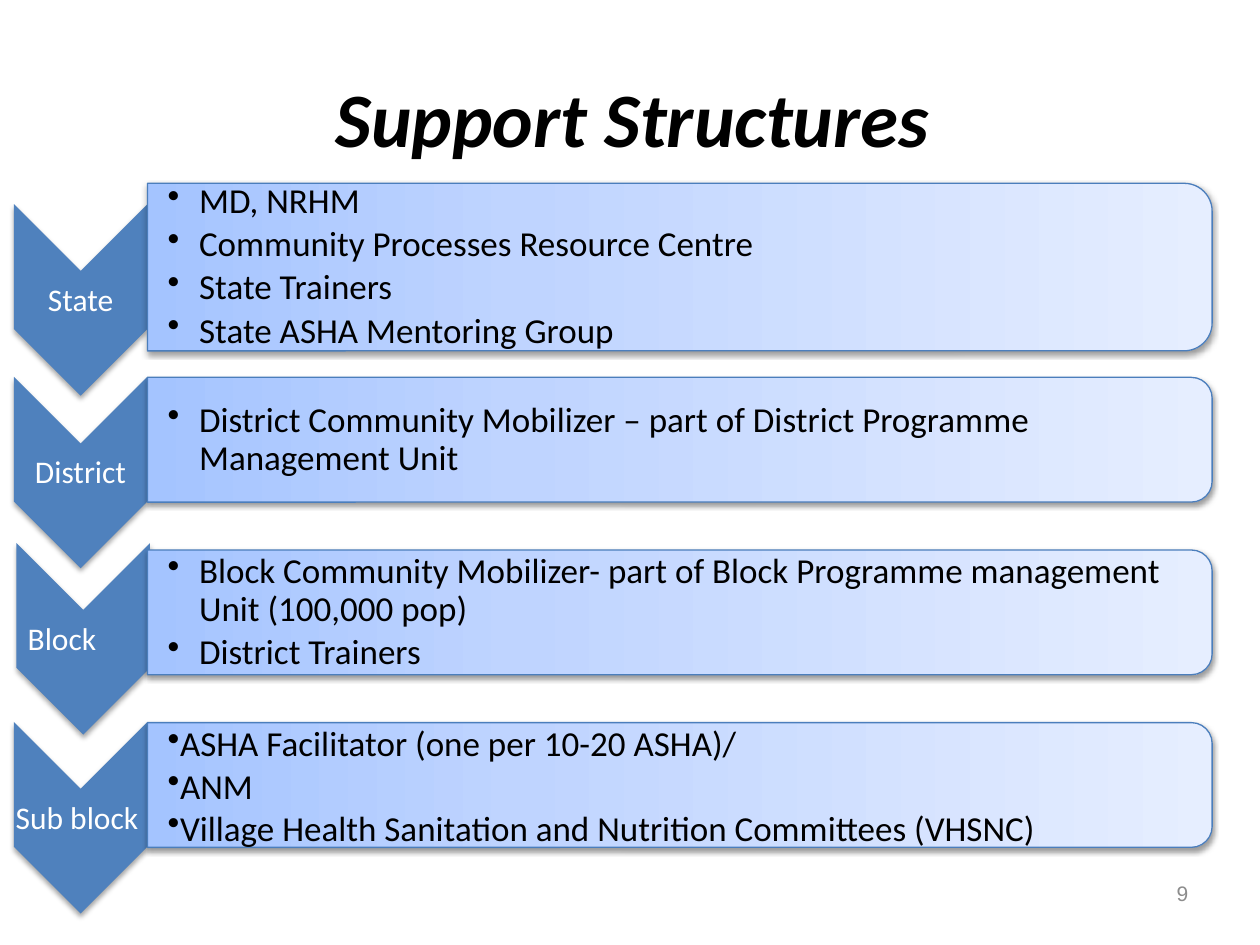
import pptx
import pptx.util
import pptx.dml.color
import pptx.enum.shapes
import pptx.enum.text
import pptx.oxml
import pptx.oxml.ns
from pptx.util import Inches

ALIGN = pptx.enum.text.PP_ALIGN
ANCHOR = pptx.enum.text.MSO_ANCHOR
SHAPE = pptx.enum.shapes.MSO_SHAPE

ROW_PITCH = 1.37
CHEVRON_LEFT, CHEVRON_TOP = 0.11, 1.62
CHEVRON_WIDTH, CHEVRON_HEIGHT = 1.06, 1.52
PANEL_LEFT, PANEL_WIDTH, PANEL_CENTER = 1.17, 8.45, 2.12
PANEL_STOPS = ((0, "A4C4FF"), (35, "BFD4FF"), (100, "E6EEFF"))

HANGING = {"indent": 0.25, "format": {"line_spacing": 0.9, "space_after": pptx.util.Pt(3)}}
TIGHT = {"indent": 0, "format": {"line_spacing": 1.0}}
CENTERED = {"shift": (0, 0), "align": ALIGN.CENTER, "inset": 0.01}
OFFSET = {"shift": (0.02, -0.05), "align": ALIGN.LEFT, "inset": 0.09}

LEVELS = [
    ("State", CENTERED, 1.33, HANGING, [
        "MD, NRHM",
        "Community Processes Resource Centre",
        "State Trainers",
        "State ASHA Mentoring Group",
    ]),
    ("District", CENTERED, 0.99, HANGING, [
        "District Community Mobilizer – part of District Programme Management Unit",
    ]),
    ("Block", OFFSET, 0.99, HANGING, [
        "Block Community Mobilizer- part of Block Programme management Unit (100,000 pop)",
        "District Trainers",
    ]),
    ("Sub block ", CENTERED, 0.99, TIGHT, [
        "ASHA Facilitator (one per 10-20 ASHA)/",
        "ANM",
        "Village Health Sanitation and Nutrition Committees (VHSNC)",
    ]),
]


def color(value):
    return pptx.dml.color.RGBColor.from_string(value)


def apply(target, values):
    for name, value in values.items():
        setattr(target, name, value)


def element(xml):
    namespace = pptx.oxml.ns.nsdecls("a")
    return pptx.oxml.parse_xml(xml.replace(">", f" {namespace}>", 1))


def write(para, text, size, font, fill, **style):
    span = para.add_run()
    span.text = text
    apply(span.font, {"size": pptx.util.Pt(size), "name": font, **style})
    span.font.color.rgb = color(fill)


def add_text_box(page, left, top, width, height, insets, anchor):
    box = page.shapes.add_textbox(*map(Inches, (left, top, width, height)))
    names = ("margin_left", "margin_top", "margin_right", "margin_bottom")
    frame_format = dict(zip(names, map(Inches, insets)))
    apply(box.text_frame, {**frame_format, "word_wrap": True, "vertical_anchor": anchor})
    return box.text_frame


def add_turned_shape(page, preset, left, top, width, height):
    turned_left = left + (width - height) / 2
    turned_top = top + (height - width) / 2
    shape = page.shapes.add_shape(
        preset, *map(Inches, (turned_left, turned_top, height, width)))
    shape.rotation = 90
    return shape


def add_shadow(shape, opacity, distance):
    shape.shadow.inherit = False
    effects = shape.element.spPr.find(pptx.oxml.ns.qn("a:effectLst"))
    blur, offset = pptx.util.Pt(3.1), pptx.util.Pt(distance)
    effects.append(element(
        f'<a:outerShdw blurRad="{blur}" dist="{offset}" dir="5400000" rotWithShape="0">'
        f'<a:srgbClr val="000000"><a:alpha val="{opacity * 1000}"/></a:srgbClr>'
        '</a:outerShdw>'))


def add_chevron(page, left, top):
    shape = add_turned_shape(
        page, SHAPE.CHEVRON, left, top, CHEVRON_WIDTH, CHEVRON_HEIGHT)
    shape.fill.solid()
    shape.fill.fore_color.rgb = color("4F81BD")
    shape.line.fill.background()
    add_shadow(shape, 35, 1.8)


def add_label(page, left, top, text, style):
    insets = (style["inset"], 0.01, 0.01, 0.01)
    frame = add_text_box(
        page, left, top + 0.54, CHEVRON_WIDTH, 0.46, insets, ANCHOR.MIDDLE)
    para = frame.paragraphs[0]
    apply(para, {"alignment": style["align"], "line_spacing": 0.9,
                 "space_after": pptx.util.Pt(6.3)})
    write(para, text, 18, "Calibri", "FFFFFF")


def add_panel(page, top, height):
    shape = add_turned_shape(
        page, SHAPE.ROUND_2_SAME_RECTANGLE, PANEL_LEFT, top, PANEL_WIDTH, height)
    stops = "".join(
        f'<a:gs pos="{place * 1000}"><a:srgbClr val="{value}"/></a:gs>'
        for place, value in PANEL_STOPS)
    shape.fill.background()
    blank = shape.element.spPr.find(pptx.oxml.ns.qn("a:noFill"))
    shape.element.spPr.replace(blank, element(
        f'<a:gradFill rotWithShape="1"><a:gsLst>{stops}</a:gsLst>'
        '<a:lin ang="16200000" scaled="0"/></a:gradFill>'))
    shape.line.color.rgb = color("4B7EBC")
    shape.line.width = pptx.util.Pt(0.75)
    add_shadow(shape, 38, 1.6)


def add_bullets(page, top, height, lines, style):
    frame = add_text_box(page, PANEL_LEFT, top + 0.05, PANEL_WIDTH - 0.04,
                         height - 0.1, (0.16, 0.01, 0.01, 0.01), ANCHOR.MIDDLE)
    indent = Inches(style["indent"])
    for index, text in enumerate(lines):
        para = frame.add_paragraph() if index else frame.paragraphs[0]
        apply(para, {"level": 1, "alignment": ALIGN.LEFT, **style["format"]})
        properties = para._p.get_or_add_pPr()
        properties.set("marL", str(indent))
        properties.set("indent", str(-indent))
        properties.append(element('<a:buChar char="•"></a:buChar>'))
        write(para, text, 20, "Calibri", "000000")


def add_title(page, text):
    title = page.shapes.title
    apply(title, dict(zip(("left", "top", "width", "height"),
                          map(Inches, (0.5, 0.3, 9, 1.25)))))
    apply(title.text_frame, {"vertical_anchor": ANCHOR.MIDDLE,
                             "margin_left": Inches(0.14)})
    para = title.text_frame.paragraphs[0]
    para.alignment = ALIGN.CENTER
    write(para, text, 44, "Calibri", "000000", bold=True, italic=True)


def add_page_number(page, text):
    frame = add_text_box(page, 7.17, 6.95, 2.33, 0.4,
                         (0.07, 0.04, 0.07, 0.04), ANCHOR.TOP)
    para = frame.paragraphs[0]
    para.alignment = ALIGN.RIGHT
    write(para, text, 12, "Arial", "8C8C8C")


def add_level(page, index, label, label_style, height, list_style, lines):
    shift_x, shift_y = label_style["shift"]
    left = CHEVRON_LEFT + shift_x
    top = CHEVRON_TOP + index * ROW_PITCH + shift_y
    panel_top = PANEL_CENTER + index * ROW_PITCH - height / 2
    add_chevron(page, left, top)
    add_label(page, left, top, label, label_style)
    add_panel(page, panel_top, height)
    add_bullets(page, panel_top, height, lines, list_style)


def main():
    deck = pptx.Presentation()
    apply(deck, {"slide_width": Inches(10), "slide_height": Inches(7.5)})
    page = deck.slides.add_slide(deck.slide_layouts[5])
    add_title(page, "Support Structures")
    add_page_number(page, "9")
    for index, level in enumerate(LEVELS):
        add_level(page, index, *level)
    deck.save("out.pptx")


if __name__ == "__main__":
    main()
